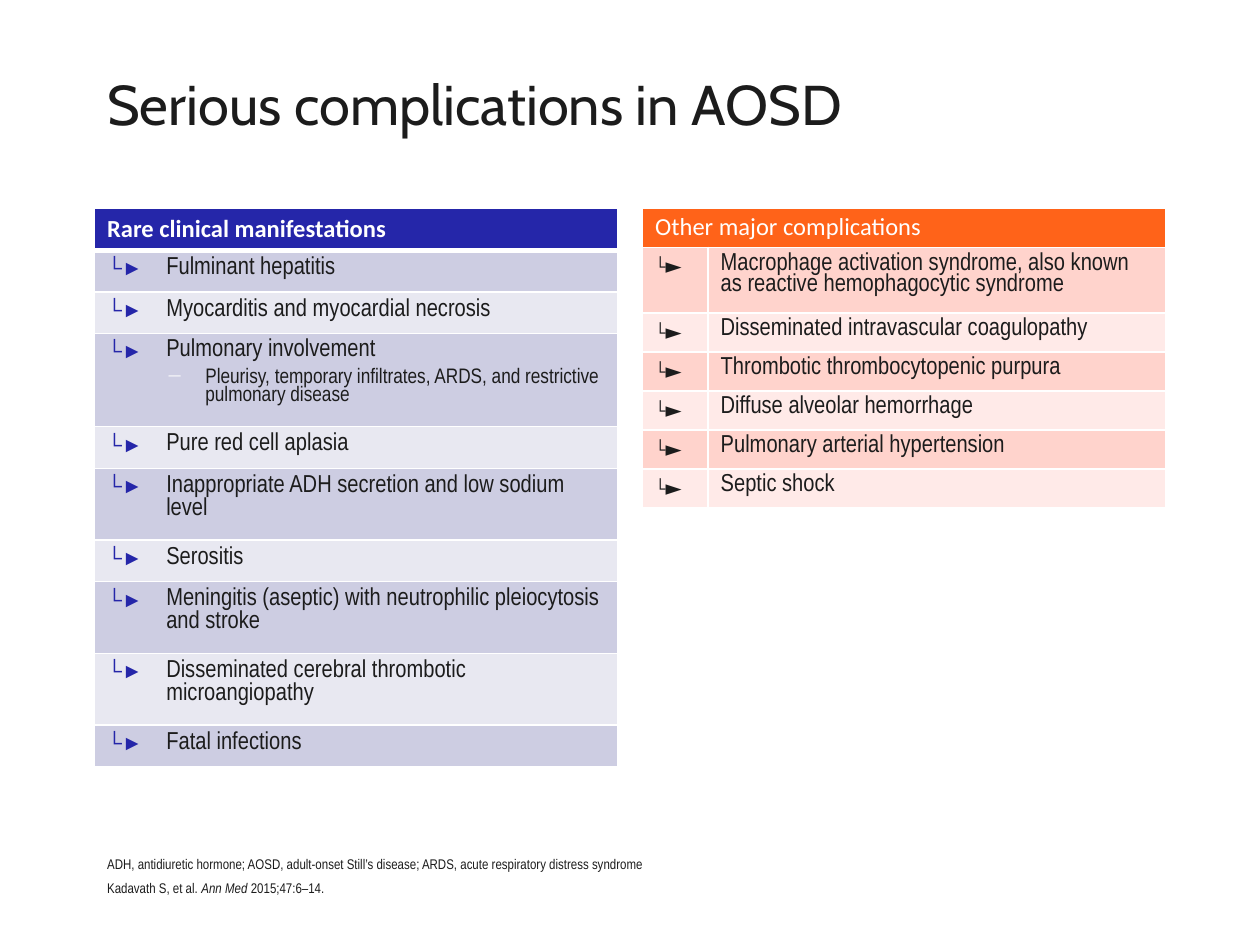
from dataclasses import dataclass

from lxml import etree
from pptx import Presentation
from pptx import util as u
from pptx.dml.color import RGBColor
from pptx.enum import text as t
from pptx.oxml.ns import qn

COLORS = {
    "ink": "1C1C1C", "white": "FFFFFF",
    "blue": "2526A9", "blue_dark": "CDCDE2", "blue_light": "E8E8F1",
    "orange": "FF6319", "orange_dark": "FFD3CC", "orange_light": "FFEAE8",
}
WIDTH, HEIGHT = 10, 7.5
MARGIN = 0.075 * WIDTH
TABLE_WIDTH = 0.415 * WIDTH
TABLE_TOP = 0.22 * HEIGHT
MARKER = "└►"


@dataclass
class Item:
    text: str
    height: float
    detail: str = ""


@dataclass
class Panel:
    heading: str
    left: float
    marker_width: float
    heading_height: float
    theme: str
    marker_font: str
    marker_color: str
    bold: bool
    line_spacing: float
    heading_rule: float
    divider: bool
    items: list[Item]


PANELS = [
    Panel("Rare clinical manifestations", MARGIN, 0.47, 0.32, "blue", "Arial",
          "blue", True, 1.0, 3, False, [
              Item("Fulminant hepatitis", 0.33),
              Item("Myocarditis and myocardial necrosis", 0.33),
              Item("Pulmonary involvement", 0.74,
                   "Pleurisy, temporary infiltrates, ARDS, and restrictive pulmonary disease"),
              Item("Pure red cell aplasia", 0.33),
              Item("Inappropriate ADH secretion and low sodium level", 0.57),
              Item("Serositis", 0.33),
              Item("Meningitis (aseptic) with neutrophilic pleiocytosis and stroke", 0.57),
              Item("Disseminated cerebral thrombotic microangiopathy", 0.57),
              Item("Fatal infections", 0.33),
          ]),
    Panel("Other major complications", WIDTH - MARGIN - TABLE_WIDTH, 0.52, 0.31,
          "orange", "Calibri", "ink", False, 0.9, 1, True, [
              Item("Macrophage activation syndrome, also known as reactive "
                   "hemophagocytic syndrome", 0.52),
              Item("Disseminated intravascular coagulopathy", 0.31),
              Item("Thrombotic thrombocytopenic purpura", 0.31),
              Item("Diffuse alveolar hemorrhage", 0.31),
              Item("Pulmonary arterial hypertension", 0.31),
              Item("Septic shock", 0.31),
          ]),
]


def rgb(name: str) -> RGBColor:
    return RGBColor.from_string(COLORS[name])


def write(paragraph, *parts: str, size: float = 14, font: str = "Arial Narrow",
          color: str = "ink", bold: bool = False, italic: tuple = (),
          line_spacing: float = 1.0, before: float = 0, after: float = 0) -> None:
    """Fill a paragraph with runs; italic lists the indexes of slanted parts."""
    paragraph.alignment = t.PP_ALIGN.LEFT
    paragraph.line_spacing = line_spacing
    paragraph.space_before, paragraph.space_after = u.Pt(before), u.Pt(after)
    for index, part in enumerate(parts):
        run = paragraph.add_run()
        run.text = part
        run.font.size, run.font.name = u.Pt(size), font
        run.font.bold, run.font.italic = bold, index in italic
        run.font.color.rgb = rgb(color)


def set_bullet(paragraph, char: str = "", color: str = "white", indent: float = 0) -> None:
    """Give a hanging bullet, or none when char is empty."""
    props = paragraph._p.get_or_add_pPr()
    props.set("marL", str(u.Inches(indent)))
    props.set("indent", str(-u.Inches(indent)))
    if char:
        bullet_color = etree.SubElement(props, qn("a:buClr"))
        etree.SubElement(bullet_color, qn("a:srgbClr"), val=COLORS[color])
        etree.SubElement(props, qn("a:buChar"), char=char)
    else:
        etree.SubElement(props, qn("a:buNone"))


def style_cell(cell, fill: str, borders: dict[str, float]) -> None:
    """Set white borders (side to points, 0 for none), then the fill."""
    props = cell._tc.get_or_add_tcPr()
    for side in "LRTB":
        width = borders.get(side, 1)
        line = etree.SubElement(props, qn(f"a:ln{side}"), w=str(u.Pt(width)))
        if width:
            solid = etree.SubElement(line, qn("a:solidFill"))
            etree.SubElement(solid, qn("a:srgbClr"), val=COLORS["white"])
        else:
            etree.SubElement(line, qn("a:noFill"))
    cell.fill.solid()
    cell.fill.fore_color.rgb = rgb(fill)


def draw_panel(slide, panel: Panel) -> None:
    heights = [panel.heading_height] + [item.height for item in panel.items]
    table = slide.shapes.add_table(
        len(heights), 2, u.Inches(panel.left), u.Inches(TABLE_TOP),
        u.Inches(TABLE_WIDTH), u.Inches(sum(heights))).table
    table.columns[0].width = u.Inches(panel.marker_width)
    table.columns[1].width = u.Inches(TABLE_WIDTH - panel.marker_width)
    for row, height in zip(table.rows, heights):
        row.height = u.Inches(height)

    heading = table.cell(0, 0)
    heading.merge(table.cell(0, 1))
    for column in range(2):
        style_cell(table.cell(0, column), panel.theme, {"B": panel.heading_rule})
    write(heading.text_frame.paragraphs[0], panel.heading, font="Calibri",
          color="white", bold=panel.bold, line_spacing=panel.line_spacing)

    divider = 1 if panel.divider else 0
    for row, item in enumerate(panel.items, start=1):
        marker, body = table.cell(row, 0), table.cell(row, 1)
        fill = f"{panel.theme}_{'dark' if row % 2 else 'light'}"
        top = panel.heading_rule if row == 1 else 1
        style_cell(marker, fill, {"R": divider, "T": top})
        style_cell(body, fill, {"L": divider, "T": top})
        marker.margin_right = 0
        write(marker.text_frame.paragraphs[0], MARKER, size=12,
              font=panel.marker_font, color=panel.marker_color)
        spacing = 0.9 if item.detail else panel.line_spacing
        write(body.text_frame.paragraphs[0], item.text, line_spacing=spacing,
              after=5 if item.detail else 0)
        if item.detail:
            detail = body.text_frame.add_paragraph()
            detail.level = 1
            write(detail, item.detail, size=12, line_spacing=spacing)
            set_bullet(detail, "−", indent=0.31)


def place(shape, left: float, top: float, width: float, height: float, anchor):
    """Move a placeholder and return its text frame."""
    shape.left, shape.top = u.Inches(left), u.Inches(top)
    shape.width, shape.height = u.Inches(width), u.Inches(height)
    frame = shape.text_frame
    frame.word_wrap, frame.auto_size = True, t.MSO_AUTO_SIZE.NONE
    frame.vertical_anchor = anchor
    return frame


def main() -> None:
    deck = Presentation()
    deck.slide_width, deck.slide_height = u.Inches(WIDTH), u.Inches(HEIGHT)
    slide = deck.slides.add_slide(deck.slide_layouts[1])

    title = place(slide.shapes.title, MARGIN, 0.5, WIDTH - 2 * MARGIN, 1.05,
                  t.MSO_ANCHOR.TOP)
    write(title.paragraphs[0], "Serious complications in AOSD", size=32, font="Cabin")

    notes = place(slide.placeholders[1], MARGIN, 6.74, 6.58, 0.42, t.MSO_ANCHOR.BOTTOM)
    abbreviations, citation = notes.paragraphs[0], notes.add_paragraph()
    write(abbreviations, "ADH, antidiuretic hormone; AOSD, adult-onset Still’s disease; "
          "ARDS, acute respiratory distress syndrome", size=8)
    write(citation, "Kadavath S, et al. ", "Ann Med ", "2015;47:6–14.", size=8,
          italic=(1,), before=4)
    for paragraph in notes.paragraphs:
        set_bullet(paragraph)

    for panel in PANELS:
        draw_panel(slide, panel)
    deck.save("out.pptx")


if __name__ == "__main__":
    main()
